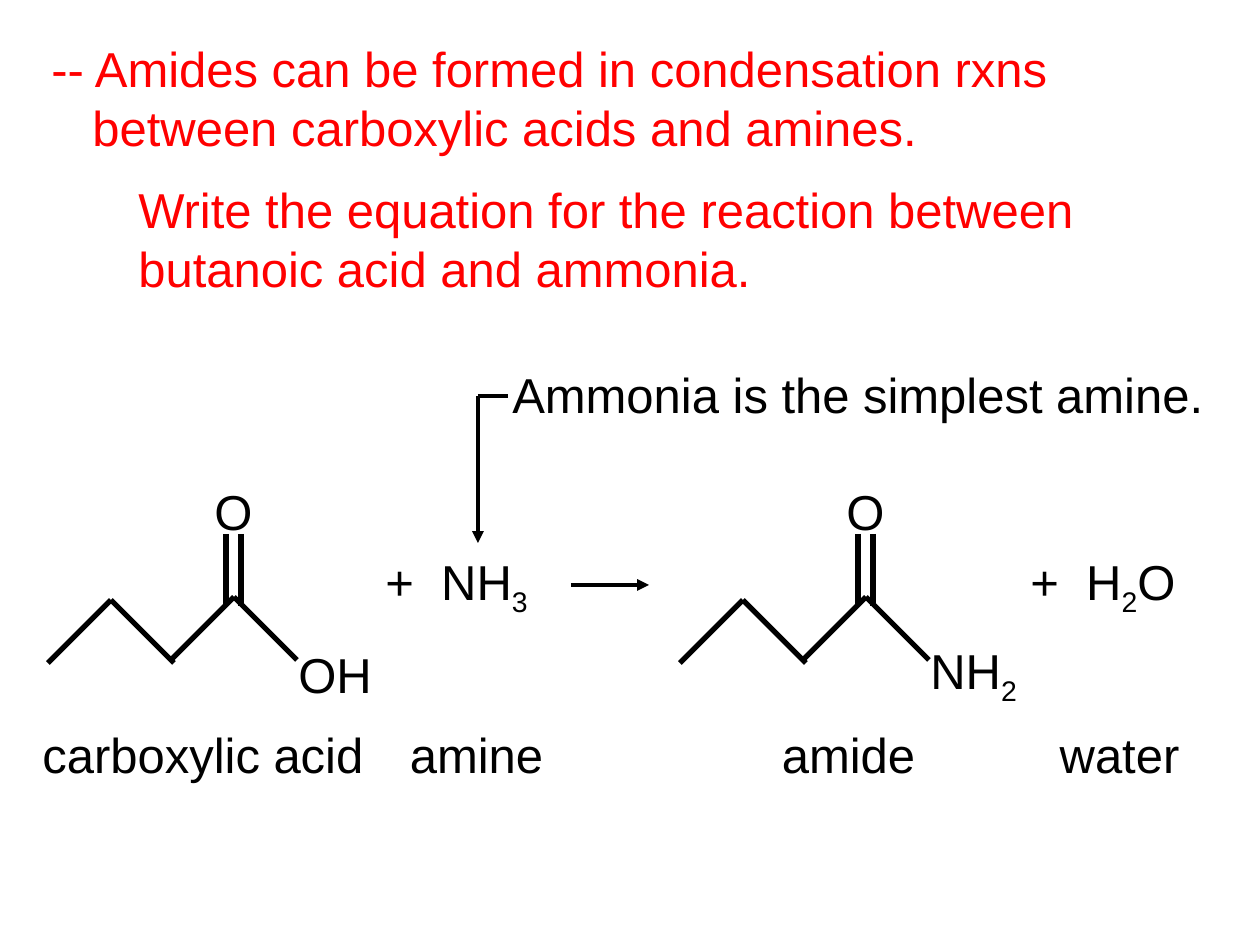
from itertools import groupby
from typing import NamedTuple

from lxml import etree
from pptx import Presentation
from pptx.dml.color import RGBColor
from pptx.enum.shapes import MSO_CONNECTOR
from pptx.enum.text import MSO_ANCHOR, MSO_AUTO_SIZE, PP_ALIGN
from pptx.oxml.ns import qn
from pptx.util import Emu, Pt

STRAIGHT = MSO_CONNECTOR.STRAIGHT
MIDDLE = MSO_ANCHOR.MIDDLE
FIT_SHAPE = MSO_AUTO_SIZE.SHAPE_TO_FIT_TEXT
LEFT, CENTER = PP_ALIGN.LEFT, PP_ALIGN.CENTER

PX_PER_INCH = 126
BLACK, RED = "000000", "FF0000"
LINE_HEIGHT = 72
TWO_LINES = 130
BOND_WIDTH, ARROW_WIDTH = 3, 2.25
PRODUCT_SHIFT = 632
FORMULA_TOP, LABEL_TOP = 549, 718


class Label(NamedTuple):
    text: str
    left: int
    top: int
    width: int
    height: int = LINE_HEIGHT
    color: str = BLACK
    align: PP_ALIGN = LEFT
    hanging: int = 0


class Line(NamedTuple):
    x1: int
    y1: int
    x2: int
    y2: int
    width: float = BOND_WIDTH
    arrow: bool = False


class Molecule(NamedTuple):
    shift: int
    group_label: Label


BONDS = [
    Line(234, 597, 297, 660),
    Line(234, 597, 171, 660),
    Line(226, 534, 226, 606),
    Line(241, 534, 241, 606),
    Line(111, 600, 48, 663),
    Line(111, 600, 174, 663),
]
OXYGEN = Label("O", 202, 475, 63)

MOLECULES = [
    Molecule(0, Label("OH", 286, 638, 112)),
    Molecule(PRODUCT_SHIFT, Label("NH2", 286, 638, 129)),
]

LABELS = [
    Label("-- Amides can be formed in condensation rxns\n"
          "between carboxylic acids and amines.",
          39, 32, 1027, TWO_LINES, RED, hanging=41),
    Label("Write the equation for the reaction between\n"
          "butanoic acid and ammonia.", 126, 173, 964, TWO_LINES, RED),
    Label("+ NH3", 373, FORMULA_TOP, 170),
    Label("+ H2O", 1018, FORMULA_TOP, 174),
    Label("carboxylic acid", 30, LABEL_TOP, 348),
    Label("amine", 397, LABEL_TOP, 159, align=CENTER),
    Label("amide", 769, LABEL_TOP, 159, align=CENTER),
    Label("water", 1047, LABEL_TOP, 145, align=CENTER),
]

REACTION_ARROW = Line(571, 585, 649, 585, ARROW_WIDTH, True)
CALLOUT_LINES = [
    Line(478, 396, 478, 543, ARROW_WIDTH, True),
    Line(478, 396, 508, 396, ARROW_WIDTH),
]
CALLOUT_TEXT = Label("Ammonia is the simplest amine.", 500, 358, 718)


def px(length: int) -> Emu:
    return Emu(round(length * 914400 / PX_PER_INCH))


def rgb(color: str) -> RGBColor:
    return RGBColor.from_string(color)


def add_formula_runs(paragraph, text: str) -> None:
    """Set digits as subscripts and widen the gap after a leading plus sign."""
    if text.startswith("+ "):
        plus = paragraph.add_run()
        plus.text = "+ "
        plus._r.get_or_add_rPr().set("spc", "390")
        text = text[2:]
    for is_digit, characters in groupby(text, str.isdigit):
        run = paragraph.add_run()
        run.text = "".join(characters)
        if is_digit:
            run._r.get_or_add_rPr().set("baseline", "-25000")


def draw_label(shapes, label: Label) -> None:
    box = shapes.add_textbox(px(label.left), px(label.top),
                             px(label.width), px(label.height))
    frame = box.text_frame
    frame.word_wrap = False
    frame.auto_size = FIT_SHAPE
    frame.vertical_anchor = MIDDLE
    for index, text in enumerate(label.text.split("\n")):
        paragraph = frame.add_paragraph() if index else frame.paragraphs[0]
        paragraph.alignment = label.align
        paragraph.font.name = "Arial"
        paragraph.font.size = Pt(28)
        paragraph.font.color.rgb = rgb(label.color)
        if index and label.hanging:
            paragraph._p.get_or_add_pPr().set("marL", str(px(label.hanging)))
        add_formula_runs(paragraph, text)


def draw_line(shapes, line: Line) -> None:
    connector = shapes.add_connector(STRAIGHT, px(line.x1), px(line.y1),
                                     px(line.x2), px(line.y2))
    connector.line.color.rgb = rgb(BLACK)
    connector.line.width = Pt(line.width)
    properties = connector._element.spPr
    if line.arrow:
        outline = properties.find(qn("a:ln"))
        etree.SubElement(outline, qn("a:tailEnd"), type="triangle")
    etree.SubElement(properties, qn("a:effectLst"))


def draw_molecule(shapes, molecule: Molecule) -> None:
    group = shapes.add_group_shape().shapes
    for bond in BONDS:
        draw_line(group, bond._replace(x1=bond.x1 + molecule.shift,
                                       x2=bond.x2 + molecule.shift))
    for label in (OXYGEN, molecule.group_label):
        draw_label(group, label._replace(left=label.left + molecule.shift))


def draw_callout(shapes) -> None:
    group = shapes.add_group_shape().shapes
    for line in CALLOUT_LINES:
        draw_line(group, line)
    draw_label(group, CALLOUT_TEXT)


def main() -> None:
    presentation = Presentation()
    presentation.slide_width = px(1260)
    presentation.slide_height = px(945)
    slide = presentation.slides.add_slide(presentation.slide_layouts[6])
    for molecule in MOLECULES:
        draw_molecule(slide.shapes, molecule)
    for label in LABELS:
        draw_label(slide.shapes, label)
    draw_line(slide.shapes, REACTION_ARROW)
    draw_callout(slide.shapes)
    presentation.save("out.pptx")


if __name__ == "__main__":
    main()
